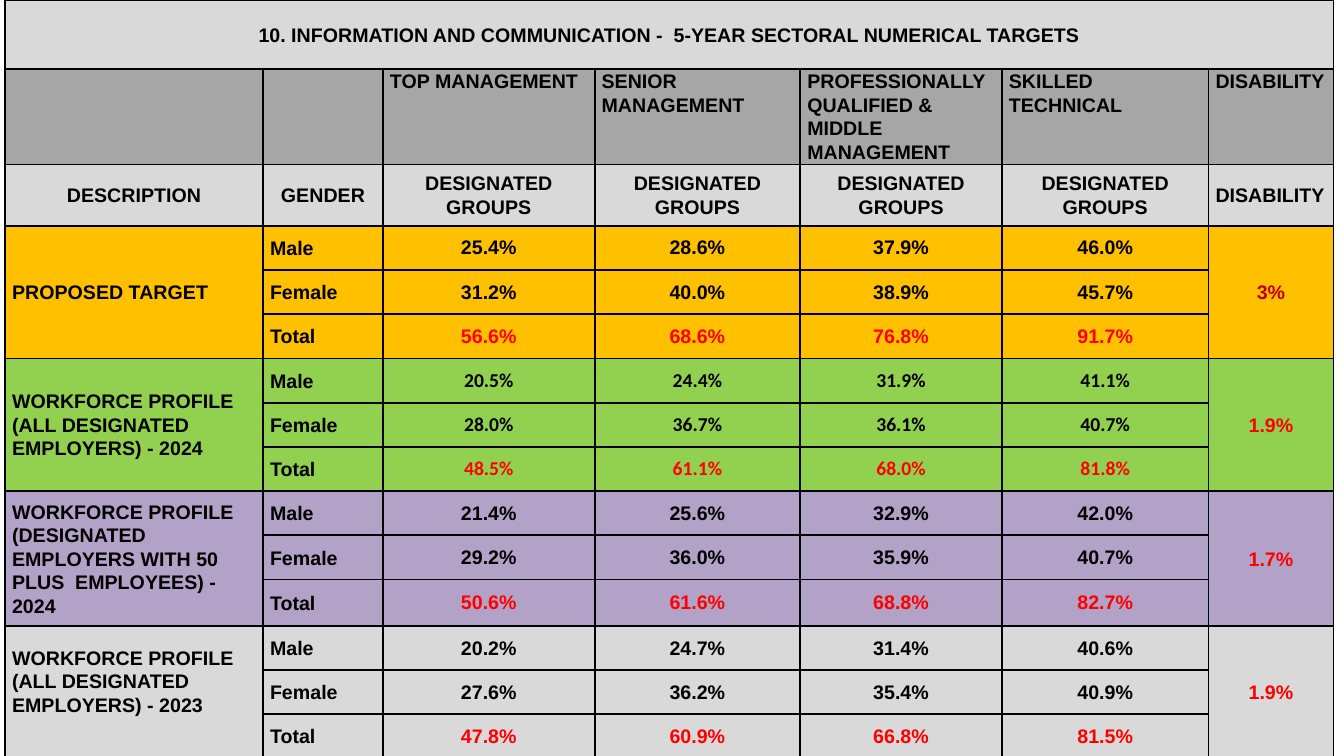
from dataclasses import dataclass

from lxml.etree import SubElement
from pptx import Presentation
from pptx.dml.color import RGBColor
from pptx.enum.text import MSO_ANCHOR, PP_ALIGN
from pptx.oxml.ns import qn
from pptx.table import Table, _Cell
from pptx.util import Pt

COLOURS = {
    "black": "000000",
    "red": "FF0000",
    "dark red": "C00000",
    "light grey": "D9D9D9",
    "grey": "A6A6A6",
    "amber": "FFC000",
    "green": "92D050",
    "purple": "B3A2C7",
}
COLUMN_WIDTHS = [184.3, 85.7, 151.2, 146.9, 144, 147.6, 89.3]
ROW_HEIGHTS = [49.5, 68, 43.9] + [31.6] * 8 + [33.1] + [31.6] * 3
GENDERS = ["Male", "Female", "Total"]
LEVELS = ["TOP MANAGEMENT", "SENIOR MANAGEMENT",
          "PROFESSIONALLY QUALIFIED & MIDDLE MANAGEMENT", "SKILLED TECHNICAL"]
SUBHEADINGS = ["DESCRIPTION", "GENDER"] + ["DESIGNATED GROUPS"] * 4


@dataclass
class Style:
    fill: str
    colour: str = "black"
    font: str = "Arial"
    align: PP_ALIGN = PP_ALIGN.LEFT
    anchor: MSO_ANCHOR = MSO_ANCHOR.MIDDLE
    spacing: float = 1.07
    side_margin: float = 5
    bottom_margin: float = 0


@dataclass
class Group:
    description: str
    fill: str
    values: list[list[str]]
    disability: str
    disability_colour: str = "red"
    value_font: str = "Arial"
    value_spacing: float = 1.0
    value_margin: float = 0.7
    description_bottom: float = 0


GROUPS = [
    Group("PROPOSED TARGET", "amber",
          [["25.4%", "28.6%", "37.9%", "46.0%"],
           ["31.2%", "40.0%", "38.9%", "45.7%"],
           ["56.6%", "68.6%", "76.8%", "91.7%"]],
          "3%", disability_colour="dark red"),
    Group("WORKFORCE PROFILE (ALL DESIGNATED EMPLOYERS) - 2024", "green",
          [["20.5%", "24.4%", "31.9%", "41.1%"],
           ["28.0%", "36.7%", "36.1%", "40.7%"],
           ["48.5%", "61.1%", "68.0%", "81.8%"]],
          "1.9%", value_font="Calibri"),
    Group("WORKFORCE PROFILE (DESIGNATED EMPLOYERS WITH 50 PLUS  EMPLOYEES) - 2024", "purple",
          [["21.4%", "25.6%", "32.9%", "42.0%"],
           ["29.2%", "36.0%", "35.9%", "40.7%"],
           ["50.6%", "61.6%", "68.8%", "82.7%"]],
          "1.7%"),
    Group("WORKFORCE PROFILE (ALL DESIGNATED EMPLOYERS) - 2023", "light grey",
          [["20.2%", "24.7%", "31.4%", "40.6%"],
           ["27.6%", "36.2%", "35.4%", "40.9%"],
           ["47.8%", "60.9%", "66.8%", "81.5%"]],
          "1.9%", value_spacing=1.07, value_margin=5, description_bottom=16),
]


def add_borders(cell: _Cell) -> None:
    """Draw all four edges; must run before the cell is filled."""
    properties = cell._tc.get_or_add_tcPr()
    for side in ("a:lnL", "a:lnR", "a:lnT", "a:lnB"):
        line = SubElement(properties, qn(side), w=str(Pt(1.5)))
        fill = SubElement(line, qn("a:solidFill"))
        SubElement(fill, qn("a:srgbClr"), val=COLOURS["black"])


def write_cell(cell: _Cell, text: str, style: Style) -> None:
    cell.fill.solid()
    cell.fill.fore_color.rgb = RGBColor.from_string(COLOURS[style.fill])
    cell.margin_left = cell.margin_right = Pt(style.side_margin)
    cell.margin_top = Pt(0)
    cell.margin_bottom = Pt(style.bottom_margin)
    cell.vertical_anchor = style.anchor
    if not text:
        return
    para = cell.text_frame.paragraphs[0]
    para.alignment = style.align
    para.line_spacing = style.spacing
    span = para.add_run()
    span.text = text
    span.font.name = style.font
    span.font.size = Pt(14)
    span.font.bold = True
    span.font.color.rgb = RGBColor.from_string(COLOURS[style.colour])


def write_headings(table: Table) -> None:
    centred = Style("light grey", align=PP_ALIGN.CENTER)
    table.cell(0, 0).merge(table.cell(0, 6))
    write_cell(table.cell(0, 0),
               "10. INFORMATION AND COMMUNICATION -  5-YEAR SECTORAL NUMERICAL TARGETS", centred)
    for column, text in enumerate(["", "", *LEVELS, "DISABILITY"]):
        write_cell(table.cell(1, column), text, Style("grey", anchor=MSO_ANCHOR.TOP))
    for column, text in enumerate(SUBHEADINGS):
        write_cell(table.cell(2, column), text, centred)
    write_cell(table.cell(2, 6), "DISABILITY", Style("light grey"))


def write_group(table: Table, top: int, group: Group) -> None:
    for column in (0, 6):
        table.cell(top, column).merge(table.cell(top + 2, column))
    write_cell(table.cell(top, 0), group.description,
               Style(group.fill, bottom_margin=group.description_bottom))
    write_cell(table.cell(top, 6), group.disability,
               Style(group.fill, group.disability_colour, align=PP_ALIGN.CENTER))
    for row, (gender, values) in enumerate(zip(GENDERS, group.values), start=top):
        write_cell(table.cell(row, 1), gender, Style(group.fill))
        value_style = Style(group.fill, "red" if gender == "Total" else "black",
                            group.value_font, PP_ALIGN.CENTER,
                            spacing=group.value_spacing, side_margin=group.value_margin)
        for column, value in enumerate(values, start=2):
            write_cell(table.cell(row, column), value, value_style)


def main() -> None:
    deck = Presentation()
    deck.slide_width, deck.slide_height = Pt(960), Pt(540)
    page = deck.slides.add_slide(deck.slide_layouts[6])
    frame = page.shapes.add_table(len(ROW_HEIGHTS), len(COLUMN_WIDTHS), Pt(3.6), Pt(0),
                                  Pt(sum(COLUMN_WIDTHS)), Pt(sum(ROW_HEIGHTS)))
    table = frame.table
    table.first_row = table.horz_banding = False
    for column, width in zip(table.columns, COLUMN_WIDTHS):
        column.width = Pt(width)
    for row, height in zip(table.rows, ROW_HEIGHTS):
        row.height = Pt(height)
    for cell in table.iter_cells():
        add_borders(cell)
    write_headings(table)
    for index, group in enumerate(GROUPS):
        write_group(table, 3 + index * len(GENDERS), group)
    deck.save("out.pptx")


if __name__ == "__main__":
    main()
